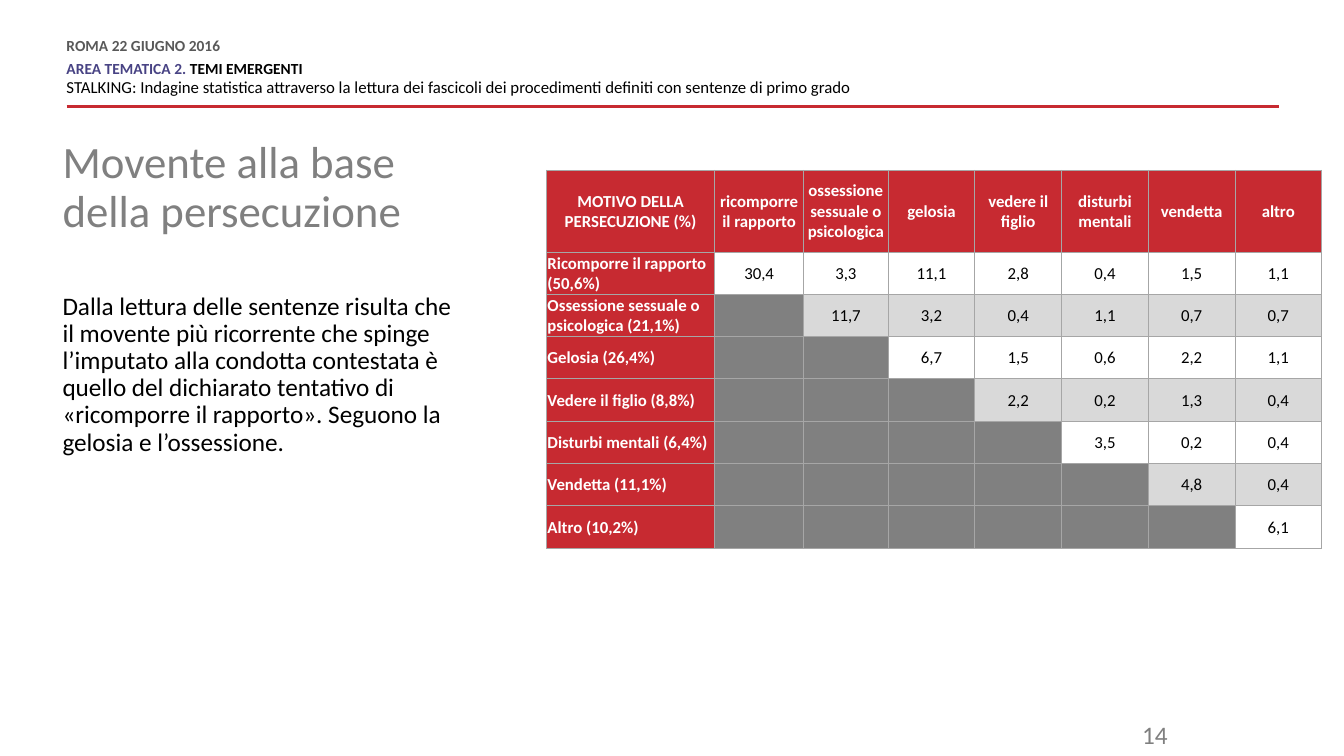
from dataclasses import dataclass
from typing import Any, Optional

from lxml import etree
from pptx import Presentation
from pptx import util as u
from pptx.dml.color import RGBColor
from pptx.enum import shapes, text
from pptx.oxml.ns import qn

SCALE = 9144  # EMU in one px, 100 px to the inch
FONT = "Calibri"
COLORS = {
    "red": "C72A31", "violet": "484384", "dark": "595959", "mid": "7F7F7F",
    "gray": "808080", "edge": "A6A6A6", "band": "D9D9D9",
    "white": "FFFFFF", "black": "000000",
}


@dataclass
class Run:
    words: str
    size: int
    color: str
    bold: bool = False


@dataclass
class Para:
    runs: list[Run]
    align: text.PP_ALIGN = text.PP_ALIGN.LEFT
    line: Any = None
    before: int = 0
    after: int = 0


@dataclass
class Box:
    left: int
    top: int
    width: int
    height: int
    paras: list[Para]
    inset: Optional[int] = 0


@dataclass
class Motive:
    head: str
    label: str
    shares: list[str]


def px(n: int) -> u.Emu:
    return u.Emu(n * SCALE)


def rgb(name: str) -> RGBColor:
    return RGBColor.from_string(COLORS[name])


def write(frame: Any, paras: list[Para]) -> None:
    for i, item in enumerate(paras):
        para = frame.paragraphs[0] if i == 0 else frame.add_paragraph()
        para.alignment = item.align
        para.space_before = u.Pt(item.before)
        para.space_after = u.Pt(item.after)
        if item.line is not None:
            para.line_spacing = item.line
        for part in item.runs:
            run = para.add_run()
            run.text = part.words
            font = run.font
            font.name, font.size, font.bold = FONT, u.Pt(part.size), part.bold
            font.color.rgb = rgb(part.color)


def fit(shape: Any, box: Box) -> None:
    shape.left, shape.top = px(box.left), px(box.top)
    shape.width, shape.height = px(box.width), px(box.height)
    frame = shape.text_frame
    frame.word_wrap = True
    frame.auto_size = text.MSO_AUTO_SIZE.NONE
    frame.vertical_anchor = text.MSO_ANCHOR.TOP
    if box.inset is not None:
        frame.margin_left = frame.margin_right = px(box.inset)
        frame.margin_top = frame.margin_bottom = px(box.inset)
    write(frame, box.paras)


def frame_cell(cell: Any) -> None:
    props = cell._tc.get_or_add_tcPr()
    for i, side in enumerate(("lnL", "lnR", "lnT", "lnB")):
        line = etree.Element(qn(f"a:{side}"), w=str(u.Pt(0.75)))
        fill = etree.SubElement(line, qn("a:solidFill"))
        etree.SubElement(fill, qn("a:srgbClr"), val=COLORS["edge"])
        props.insert(i, line)


def paint(cell: Any, fill: str, para: Optional[Para] = None) -> None:
    cell.fill.solid()
    cell.fill.fore_color.rgb = rgb(fill)
    cell.margin_left = cell.margin_right = cell.margin_top = px(1)
    cell.margin_bottom = 0
    cell.vertical_anchor = text.MSO_ANCHOR.MIDDLE
    frame_cell(cell)
    if para:
        write(cell.text_frame, [para])


MID = text.PP_ALIGN.CENTER
TIGHT = u.Pt(10.8)

# Header, title, body and page number
HEADER = Box(66, 39, 834, 59, [
    Para([Run("ROMA 22 GIUGNO 2016", 11, "dark", True)], line=TIGHT, after=6),
    Para([Run("AREA TEMATICA 2. ", 11, "violet", True),
          Run("TEMI EMERGENTI", 11, "black", True)], line=TIGHT),
    Para([Run("STALKING: Indagine statistica attraverso la lettura dei fascicoli "
              "dei procedimenti definiti con sentenze di primo grado", 12, "black")],
         line=TIGHT, before=3, after=6),
])
TITLE = Box(62, 139, 392, 113, [
    Para([Run("Movente alla base della persecuzione", 32, "gray")], line=0.9)])
BODY = Box(62, 291, 399, 334, [
    Para([Run("Dalla lettura delle sentenze risulta che il movente più ricorrente "
              "che spinge l’imputato alla condotta contestata è quello del "
              "dichiarato tentativo di «ricomporre il rapporto». Seguono la "
              "gelosia e l’ossessione.", 18, "black")], line=0.9)])
PAGE = Box(1050, 709, 118, 35, [
    Para([Run("14", 18, "mid")], text.PP_ALIGN.RIGHT)], inset=None)

# Table data: each motive is paired with itself and those after it
CORNER = "MOTIVO DELLA PERSECUZIONE (%)"
MOTIVES = [
    Motive("ricomporre il rapporto", "Ricomporre il rapporto (50,6%)",
           ["30,4", "3,3", "11,1", "2,8", "0,4", "1,5", "1,1"]),
    Motive("ossessione sessuale o psicologica",
           "Ossessione sessuale o psicologica (21,1%)",
           ["11,7", "3,2", "0,4", "1,1", "0,7", "0,7"]),
    Motive("gelosia", "Gelosia (26,4%)", ["6,7", "1,5", "0,6", "2,2", "1,1"]),
    Motive("vedere il figlio", "Vedere il figlio (8,8%)", ["2,2", "0,2", "1,3", "0,4"]),
    Motive("disturbi mentali", "Disturbi mentali (6,4%)", ["3,5", "0,2", "0,4"]),
    Motive("vendetta", "Vendetta (11,1%)", ["4,8", "0,4"]),
    Motive("altro", "Altro (10,2%)", ["6,1"]),
]
WIDTHS = [167, 88, 84] + [86] * 5
HEIGHTS = [81] + [42] * len(MOTIVES)


def add_rule(slide: Any) -> None:
    rule = slide.shapes.add_connector(
        shapes.MSO_CONNECTOR.STRAIGHT, px(66), px(106), px(1269), px(106))
    rule.line.color.rgb = rgb("red")
    rule.line.width = u.Pt(2)
    etree.SubElement(rule._element.spPr, qn("a:effectLst"))


def add_grid(slide: Any) -> None:
    grid = slide.shapes.add_table(
        len(HEIGHTS), len(WIDTHS), px(542), px(169),
        px(sum(WIDTHS)), px(sum(HEIGHTS))).table
    grid.horz_banding = False
    for col, width in zip(grid.columns, WIDTHS):
        col.width = px(width)
    for row, height in zip(grid.rows, HEIGHTS):
        row.height = px(height)
    for c, name in enumerate([CORNER] + [m.head for m in MOTIVES]):
        paint(grid.cell(0, c), "red", Para([Run(name, 12, "white", True)], MID))
    for r, motive in enumerate(MOTIVES, 1):
        paint(grid.cell(r, 0), "red", Para([Run(motive.label, 12, "white", True)]))
        for c in range(1, r):
            paint(grid.cell(r, c), "gray")
        band = "white" if r % 2 else "band"
        for c, share in enumerate(motive.shares, r):
            paint(grid.cell(r, c), band, Para([Run(share, 12, "black")], MID))


def main() -> None:
    deck = Presentation()
    deck.slide_width, deck.slide_height = px(1333), px(750)
    slide = deck.slides.add_slide(deck.slide_layouts.get_by_name("Title Only"))
    add_rule(slide)
    for box in (HEADER, PAGE, BODY):
        fit(slide.shapes.add_textbox(0, 0, 0, 0), box)
    fit(slide.shapes.title, TITLE)
    add_grid(slide)
    deck.save("out.pptx")


if __name__ == "__main__":
    main()
